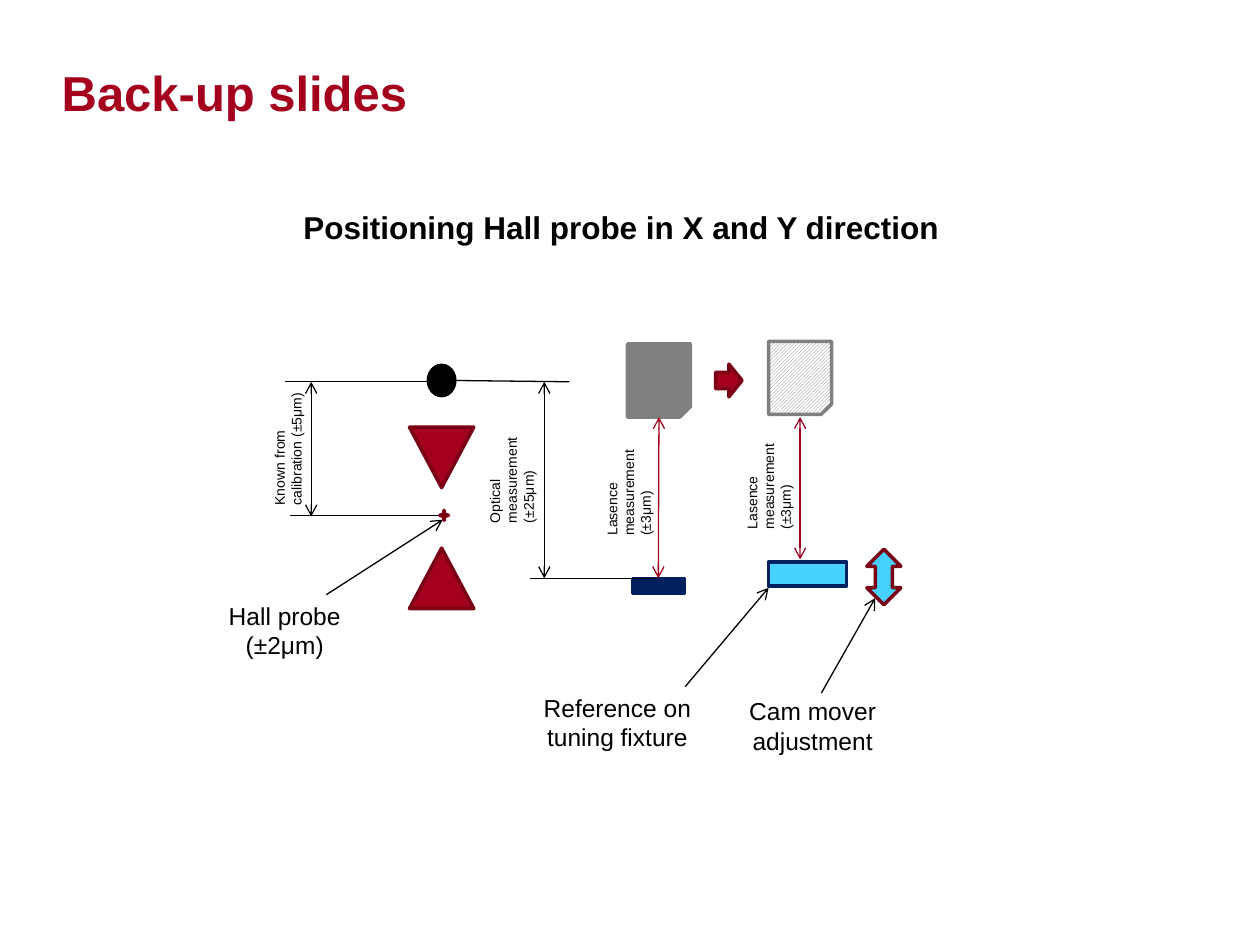
"""Build the back-up slide on positioning the Hall probe in X and Y direction."""
from dataclasses import dataclass

from lxml import etree
from pptx import Presentation
from pptx.dml.color import RGBColor
from pptx.enum.dml import MSO_PATTERN
from pptx.enum.shapes import MSO_CONNECTOR, MSO_SHAPE
from pptx.enum.text import MSO_ANCHOR, PP_ALIGN
from pptx.oxml.ns import qn
from pptx.util import Inches, Pt

STRAIGHT = MSO_CONNECTOR.STRAIGHT
TRIANGLE = MSO_SHAPE.ISOSCELES_TRIANGLE
OVAL = MSO_SHAPE.OVAL
RECTANGLE = MSO_SHAPE.RECTANGLE
SNIPPED = MSO_SHAPE.SNIP_1_RECTANGLE
STAR = MSO_SHAPE.STAR_4_POINT
RIGHT_ARROW = MSO_SHAPE.RIGHT_ARROW
UP_DOWN_ARROW = MSO_SHAPE.UP_DOWN_ARROW
CALLOUT = MSO_SHAPE.LINE_CALLOUT_1_NO_BORDER
DIAGONAL = MSO_PATTERN.LIGHT_UPWARD_DIAGONAL
TOP, MIDDLE, BOTTOM = MSO_ANCHOR.TOP, MSO_ANCHOR.MIDDLE, MSO_ANCHOR.BOTTOM
LEFT, CENTER = PP_ALIGN.LEFT, PP_ALIGN.CENTER


@dataclass(frozen=True)
class Theme:
    """Colours, type sizes and line widths of the slide."""
    font: str = "Arial"
    red: RGBColor = RGBColor(0xA4, 0x00, 0x1D)
    dark_red: RGBColor = RGBColor(0x79, 0x00, 0x15)
    beam_red: RGBColor = RGBColor(0xA0, 0x00, 0x1C)
    navy: RGBColor = RGBColor(0x00, 0x20, 0x60)
    cyan: RGBColor = RGBColor(0x47, 0xD1, 0xFF)
    grey: RGBColor = RGBColor(0x80, 0x80, 0x80)
    white: RGBColor = RGBColor(0xFF, 0xFF, 0xFF)
    black: RGBColor = RGBColor(0x00, 0x00, 0x00)
    title: Pt = Pt(28)
    heading: Pt = Pt(18)
    callout: Pt = Pt(14)
    measure: Pt = Pt(8)
    outline: Pt = Pt(2)
    thin: Pt = Pt(0.75)


THEME = Theme()


def inches(values):
    """Turn numbers into lengths."""
    return [Inches(value) for value in values]


def write(shape, text, size, color=THEME.black, bold=False, align=LEFT, anchor=TOP, wrap=True):
    """Fill a shape with evenly formatted text."""
    frame = shape.text_frame
    frame.text = text
    frame.word_wrap = wrap
    frame.vertical_anchor = anchor
    for paragraph in frame.paragraphs:
        paragraph.alignment = align
        for run in paragraph.runs:
            run.font.name = THEME.font
            run.font.size = size
            run.font.bold = bold
            run.font.color.rgb = color


def add_arrowheads(shape, *ends):
    """Put open arrowheads on the named ends of a line."""
    outline = shape.element.spPr.find(qn("a:ln"))
    for end in ends:
        etree.SubElement(outline, qn(f"a:{end}")).set("type", "arrow")


def add_part(slide, kind, box, fill, line):
    """Add one filled and outlined part of the set-up."""
    part = slide.shapes.add_shape(kind, *inches(box))
    part.shadow.inherit = False
    part.fill.solid()
    part.fill.fore_color.rgb = fill
    part.line.color.rgb = line
    part.line.width = THEME.outline
    return part


def add_sensor(slide, box, hatched=False):
    """Add a sensor with its lower right corner cut off."""
    sensor = add_part(slide, SNIPPED, box, THEME.grey, THEME.grey)
    sensor.element.spPr.find(qn("a:xfrm")).set("flipV", "1")
    if hatched:
        sensor.fill.patterned()
        sensor.fill.pattern = DIAGONAL
        sensor.fill.fore_color.rgb = THEME.grey
        sensor.fill.back_color.rgb = THEME.white
    return sensor


def add_line(slide, start, end, color=THEME.black, dimension=False):
    """Add a thin line, with arrowheads at both ends for a dimension."""
    line = slide.shapes.add_connector(STRAIGHT, *inches(start + end))
    line.line.color.rgb = color
    line.line.width = THEME.thin
    if dimension:
        add_arrowheads(line, "headEnd", "tailEnd")
    etree.SubElement(line.element.spPr, qn("a:effectLst"))
    return line


def add_callout(slide, box, pointer, text):
    """Add a centred label with an arrow to the part it names."""
    callout = slide.shapes.add_shape(CALLOUT, *inches(box))
    callout.shadow.inherit = False
    callout.fill.background()
    callout.line.color.rgb = THEME.black
    callout.line.width = THEME.thin
    for index, value in enumerate(pointer):
        callout.adjustments[index] = value
    add_arrowheads(callout, "tailEnd")
    write(callout, text, THEME.callout, align=CENTER, anchor=MIDDLE)


def add_measure(slide, box, text):
    """Add a small label that reads upwards."""
    label = slide.shapes.add_textbox(*inches(box))
    label.rotation = 270
    write(label, text, THEME.measure)


def add_headings(slide):
    """Add the title and the heading of the diagram."""
    title = slide.shapes.add_textbox(*inches((0.49, 0.14, 8.86, 0.82)))
    write(title, "Back-up slides", THEME.title, THEME.red, bold=True, anchor=BOTTOM)
    frame = title.text_frame
    frame.margin_left = frame.margin_right = frame.margin_top = frame.margin_bottom = 0
    heading = slide.shapes.add_textbox(*inches((2.31, 1.6, 5.3, 0.4)))
    write(heading, "Positioning Hall probe in X and Y direction", THEME.heading, bold=True, wrap=False)


def add_probe(slide):
    """Add the magnet tips, the target ball and the probe with its dimensions."""
    add_part(slide, TRIANGLE, (3.25, 4.35, 0.51, 0.48), THEME.red, THEME.dark_red)
    upper_tip = add_part(slide, TRIANGLE, (3.25, 3.39, 0.51, 0.48), THEME.red, THEME.dark_red)
    upper_tip.rotation = 180
    add_part(slide, OVAL, (3.4, 2.9, 0.21, 0.24), THEME.black, THEME.black)
    add_line(slide, (3.51, 3.03), (2.26, 3.03))
    add_line(slide, (3.54, 4.09), (2.3, 4.09))
    add_line(slide, (2.47, 3.03), (2.47, 4.1), dimension=True)
    add_line(slide, (3.61, 3.02), (4.52, 3.03))
    add_line(slide, (4.32, 3.03), (4.32, 4.59), dimension=True)
    add_part(slide, STAR, (3.49, 4.05, 0.07, 0.08), THEME.red, THEME.dark_red)


def add_sensors(slide):
    """Add both sensor positions, their references and the movements."""
    reference = add_part(slide, RECTANGLE, (5.02, 4.59, 0.41, 0.12), THEME.navy, THEME.navy)
    add_sensor(slide, (4.98, 2.73, 0.5, 0.58))
    beam = add_line(slide, (5.23, 3.31), (5.23, 4.59), THEME.beam_red, dimension=True)
    beam.end_connect(reference, 0)
    level = add_line(slide, (5.23, 4.59), (4.21, 4.59))
    level.begin_connect(reference, 0)
    add_part(slide, RECTANGLE, (6.1, 4.46, 0.62, 0.19), THEME.cyan, THEME.navy)
    add_line(slide, (6.35, 3.31), (6.35, 4.44), THEME.beam_red, dimension=True)
    add_sensor(slide, (6.1, 2.71, 0.5, 0.58), hatched=True)
    add_part(slide, RIGHT_ARROW, (5.68, 2.89, 0.21, 0.26), THEME.red, THEME.dark_red)
    add_part(slide, UP_DOWN_ARROW, (6.88, 4.36, 0.27, 0.44), THEME.cyan, THEME.dark_red)


def add_labels(slide):
    """Add the measurement labels and the callouts."""
    sensor_text = "Lasence measurement (±3μm)"
    for box, text in (
        ((1.73, 3.37, 1.11, 0.37), "Known from calibration (±5μm)"),
        ((3.62, 3.56, 0.88, 0.5), "Optical measurement (±25μm)"),
        ((4.55, 3.66, 0.88, 0.5), sensor_text),
        ((5.66, 3.61, 0.88, 0.5), sensor_text),
    ):
        add_measure(slide, box, text)
    for box, pointer, text in (
        ((1.69, 4.75, 1.14, 0.5), (-0.06, 0.79, -1.25, 1.6), "Hall probe\n(±2μm)"),
        ((4.21, 5.48, 1.38, 0.5), (-0.06, 0.89, -1.63, 1.37), "Reference on tuning fixture"),
        ((5.76, 5.39, 1.38, 0.74), (0.15, 0.55, -0.87, 0.86), "Cam mover adjustment"),
    ):
        add_callout(slide, box, pointer, text)


def main():
    """Build and save the slide."""
    deck = Presentation()
    deck.slide_width, deck.slide_height = Inches(10), Inches(7.5)
    slide = deck.slides.add_slide(deck.slide_layouts[6])
    add_headings(slide)
    add_probe(slide)
    add_sensors(slide)
    add_labels(slide)
    deck.save("out.pptx")


if __name__ == "__main__":
    main()
